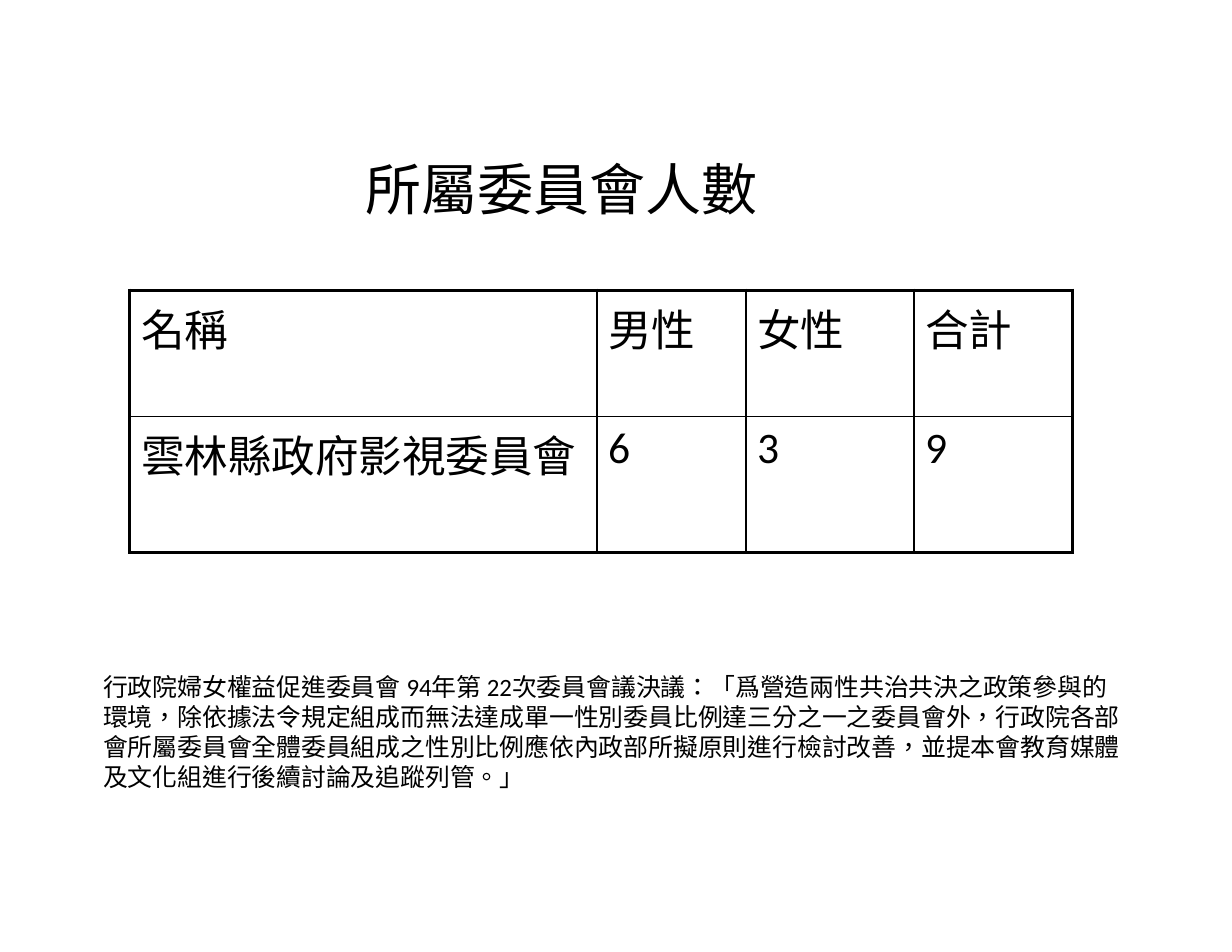
from dataclasses import dataclass

from lxml import etree
from pptx import Presentation
from pptx import util as u
from pptx.dml.color import RGBColor
from pptx.enum import text
from pptx.oxml import ns

COLORS = {"ink": "000000"}
THIN, THICK = 1, 2.25
COLUMN_WIDTHS = (4.17, 1.33, 1.5, 1.42)
ROW_HEIGHTS = (1.13, 1.21)
RESOLUTION = (
    "行政院婦女權益促進委員會 94年第 22次委員會議決議：「爲營造兩性共治共決之政策參與的環境，"
    "除依據法令規定組成而無法達成單一性別委員比例達三分之一之委員會外，"
    "行政院各部會所屬委員會全體委員組成之性別比例應依內政部所擬原則進行檢討改善，"
    "並提本會教育媒體及文化組進行後續討論及追蹤列管。」"
)


@dataclass
class Committee:
    name: str
    men: str
    women: str
    total: str

    def cells(self) -> tuple[str, ...]:
        return self.name, self.men, self.women, self.total


ROWS = (
    Committee("名稱", "男性", "女性", "合計"),
    Committee("雲林縣政府影視委員會", "6", "3", "9"),
)


def remove_bullet(paragraph) -> None:
    properties = paragraph._p.get_or_add_pPr()
    properties.set("marL", "0")
    properties.set("indent", "0")
    properties.append(etree.Element(ns.qn("a:buNone")))


def write(frame, words: str, size: float, font: str) -> None:
    """Put one unbulleted paragraph of Traditional Chinese into the frame."""
    frame.text = words
    paragraph = frame.paragraphs[0]
    remove_bullet(paragraph)
    paragraph.alignment = text.PP_ALIGN.LEFT
    paragraph.space_before = u.Pt(0)
    paragraph.font.size = u.Pt(size)
    paragraph.font.name = font
    paragraph.font.color.rgb = RGBColor.from_string(COLORS["ink"])
    paragraph.runs[0]._r.get_or_add_rPr().set("lang", "zh-TW")


def fill_placeholder(shape, box: tuple, inset: float, words: str, size: float, font: str) -> None:
    shape.left, shape.top, shape.width, shape.height = map(u.Inches, box)
    frame = shape.text_frame
    frame.auto_size = text.MSO_AUTO_SIZE.NONE
    frame.word_wrap = True
    frame.vertical_anchor = text.MSO_ANCHOR.TOP
    frame.margin_left = frame.margin_right = u.Inches(inset)
    frame.margin_top = frame.margin_bottom = u.Inches(inset / 2)
    write(frame, words, size, font)


def set_borders(cell, widths: dict[str, float]) -> None:
    """Draw solid cell borders; must run before the cell's fill is set."""
    properties = cell._tc.get_or_add_tcPr()
    for side, width in widths.items():
        line = etree.SubElement(properties, ns.qn(f"a:ln{side}"), w=str(u.Pt(width)))
        fill = etree.SubElement(line, ns.qn("a:solidFill"))
        etree.SubElement(fill, ns.qn("a:srgbClr"), val=COLORS["ink"])


def add_committee_table(slide) -> None:
    frame = slide.shapes.add_table(
        len(ROWS), len(COLUMN_WIDTHS), u.Inches(1.16), u.Inches(2.59),
        u.Inches(sum(COLUMN_WIDTHS)), u.Inches(sum(ROW_HEIGHTS)),
    )
    table = frame.table
    table.first_row = table.horz_banding = False
    for column, width in zip(table.columns, COLUMN_WIDTHS):
        column.width = u.Inches(width)
    for row, height in zip(table.rows, ROW_HEIGHTS):
        row.height = u.Inches(height)
    last_row, last_column = len(ROWS) - 1, len(COLUMN_WIDTHS) - 1
    for i, committee in enumerate(ROWS):
        for j, words in enumerate(committee.cells()):
            cell = table.cell(i, j)
            write(cell.text_frame, words, 28, "Calibri")
            outer = {"L": j == 0, "R": j == last_column, "T": i == 0, "B": i == last_row}
            set_borders(cell, {side: THICK if edge else THIN for side, edge in outer.items()})
            cell.fill.background()


def main() -> None:
    presentation = Presentation()
    presentation.slide_width = u.Inches(11)
    presentation.slide_height = u.Inches(8.5)
    slide = presentation.slides.add_slide(presentation.slide_layouts[1])
    title, body = slide.shapes.title, slide.placeholders[1]
    fill_placeholder(title, (3.16, 1.33, 4.17, 0.7), 0.1, "所屬委員會人數", 36, "Arial")
    fill_placeholder(body, (0.92, 6, 9.13, 1.47), 0, RESOLUTION, 16, "Calibri")
    add_committee_table(slide)
    presentation.save("out.pptx")


if __name__ == "__main__":
    main()
